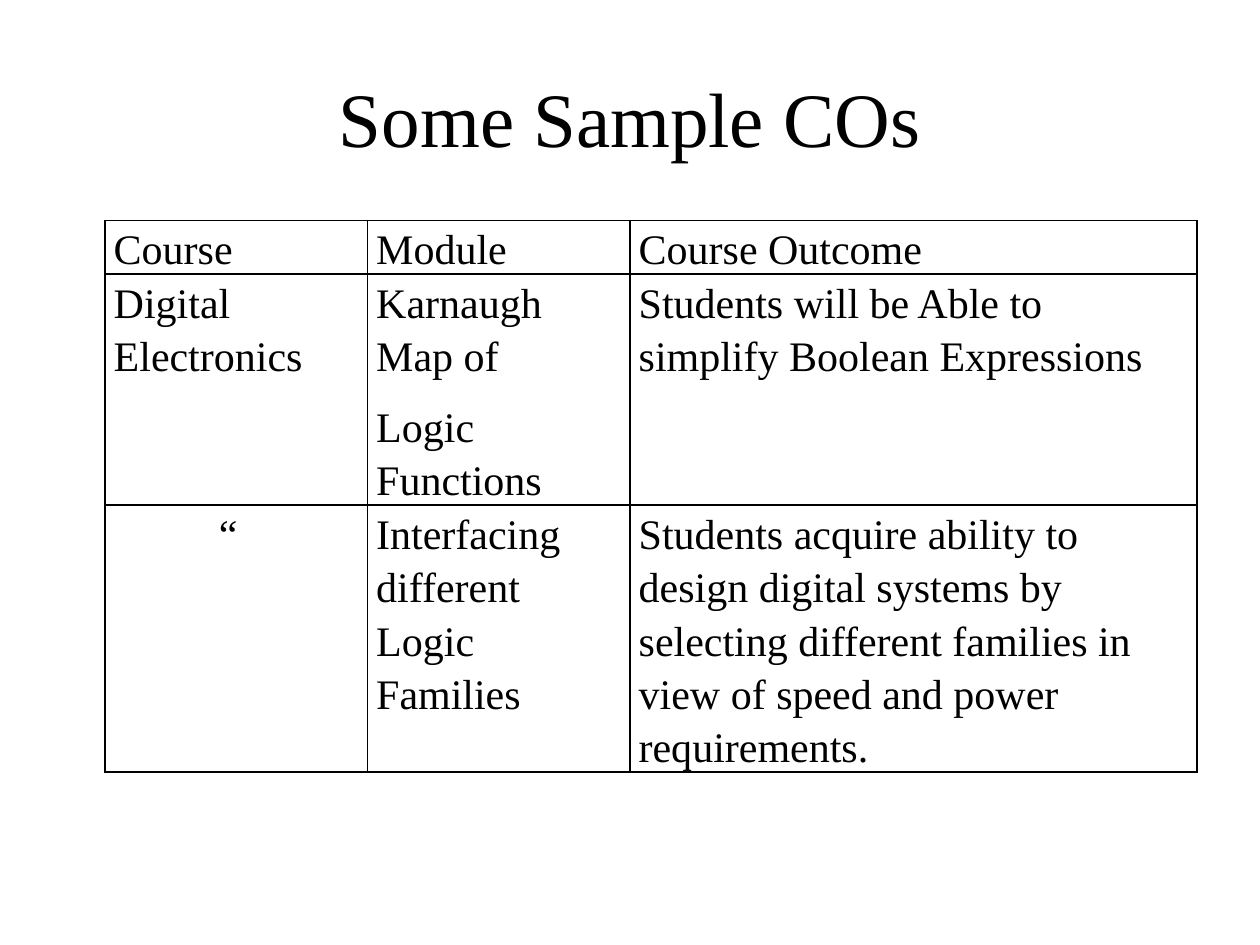
"""Build a slide with a table of sample course outcomes."""
from lxml import etree
from pptx import Presentation
from pptx import util as u
from pptx.dml.color import RGBColor
from pptx.enum import text
from pptx.oxml.ns import qn

BLACK = RGBColor(0x00, 0x00, 0x00)
FONT = "Times New Roman"
COLUMN_WIDTHS = [150, 150, 324]
ROW_HEIGHTS = [24, 57, 142]
CELL_MARGIN = 5
DITTO_INDENT = 60
ROWS = [
    ["Course", "Module", "Course Outcome"],
    ["Digital Electronics", "Karnaugh Map of\nLogic Functions",
     "Students will be Able to simplify Boolean Expressions"],
    ["“", "Interfacing different Logic Families",
     "Students acquire ability to design digital systems by selecting "
     "different families in view of speed and power requirements."],
]


def write(frame, words, size, align=text.PP_ALIGN.LEFT, spacing=1.0, after=0):
    frame.text = words
    for para in frame.paragraphs:
        para.alignment = align
        para.line_spacing = spacing
        para.space_after = u.Pt(after)
        for span in para.runs:
            span.font.name = FONT
            span.font.size = u.Pt(size)
            span.font.color.rgb = BLACK


def add_borders(cell):
    properties = cell._tc.get_or_add_tcPr()
    for position, side in enumerate(("a:lnL", "a:lnR", "a:lnT", "a:lnB")):
        line = etree.Element(qn(side), w=str(u.Pt(1)))
        fill = etree.SubElement(line, qn("a:solidFill"))
        etree.SubElement(fill, qn("a:srgbClr"), val=str(BLACK))
        properties.insert(position, line)


deck = Presentation()
deck.slide_width, deck.slide_height = u.Pt(720), u.Pt(540)
page = deck.slides.add_slide(deck.slide_layouts[5])

title = page.shapes.title
title.left, title.top, title.width, title.height = map(u.Pt, (36, 21.6, 648, 90))
title.text_frame.vertical_anchor = text.MSO_ANCHOR.MIDDLE
write(title.text_frame, "Some Sample COs", size=44, align=text.PP_ALIGN.CENTER)

table = page.shapes.add_table(
    len(ROWS), len(COLUMN_WIDTHS), u.Pt(60), u.Pt(126),
    u.Pt(sum(COLUMN_WIDTHS)), u.Pt(sum(ROW_HEIGHTS))).table
table.first_row = table.horz_banding = False
for column, width in zip(table.columns, COLUMN_WIDTHS):
    column.width = u.Pt(width)

for row, height, entries in zip(table.rows, ROW_HEIGHTS, ROWS):
    row.height = u.Pt(height)
    for cell, words in zip(row.cells, entries):
        indent = DITTO_INDENT if words == "“" else 0
        cell.margin_left = u.Pt(CELL_MARGIN + indent)
        cell.margin_right = u.Pt(CELL_MARGIN)
        cell.margin_top = cell.margin_bottom = 0
        cell.fill.background()
        write(cell.text_frame, words, size=24, spacing=1.15, after=10)
        add_borders(cell)

deck.save("out.pptx")
